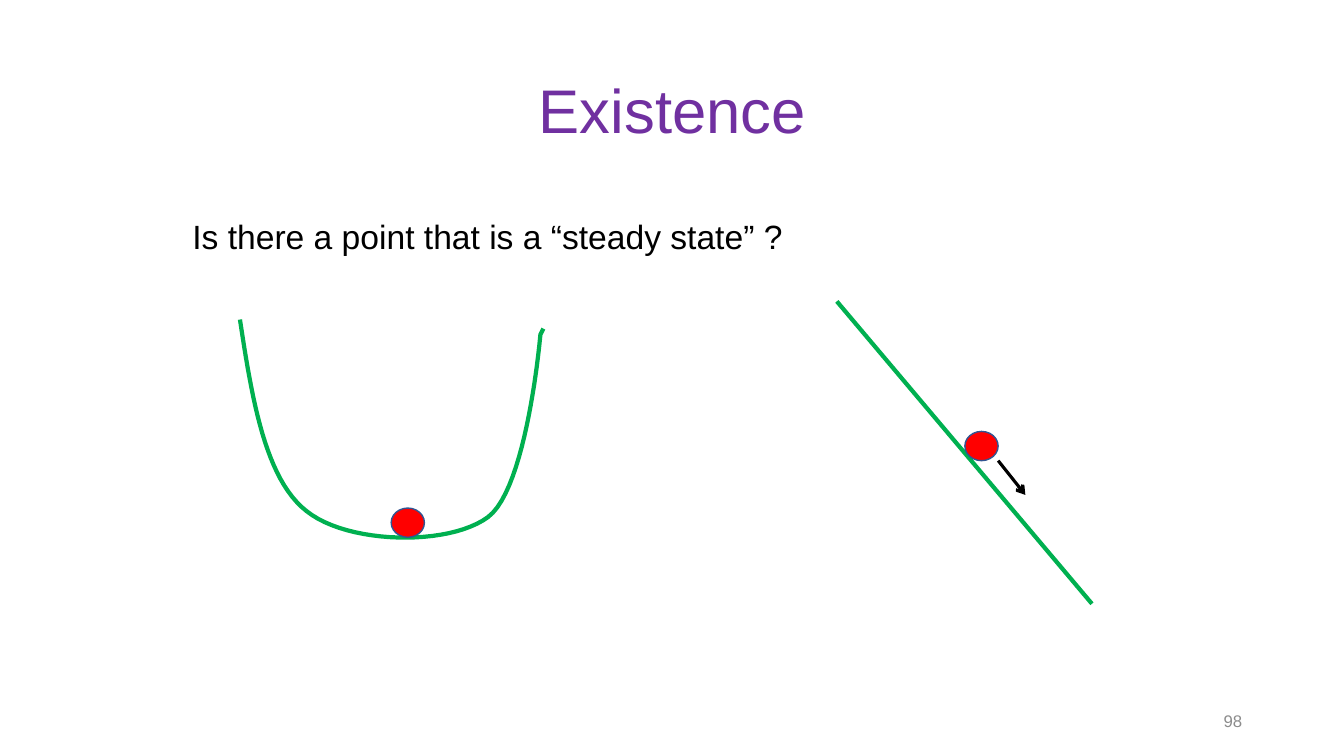
from lxml.etree import SubElement
from pptx import Presentation
from pptx.dml.color import RGBColor
from pptx.enum.shapes import MSO_CONNECTOR, MSO_SHAPE
from pptx.enum.text import MSO_ANCHOR, PP_ALIGN
from pptx.oxml.ns import qn
from pptx.util import Pt

PX = 9144
GREEN, RED, BLUE = "00B050", "FF0000", "325491"
CURVE_STEPS = 24
BALL_W, BALL_H = 33, 29


def px(length):
    """Turn px (100 to the inch) into EMU."""
    return round(length * PX)


def color(hex_code):
    """Turn a hex string into a colour."""
    return RGBColor.from_string(hex_code)


def set_line(line, hex_code, width):
    """Give a line its colour and width in points."""
    line.color.rgb = color(hex_code)
    line.width = Pt(width)


def add_text(slide, box, text, size, hex_code, align=PP_ALIGN.LEFT,
             anchor=MSO_ANCHOR.TOP, spacing=1.0):
    """Write one paragraph into the given box."""
    label = slide.shapes.add_textbox(*map(px, box))
    frame = label.text_frame
    frame.word_wrap = True
    frame.vertical_anchor = anchor
    paragraph = frame.paragraphs[0]
    paragraph.alignment = align
    paragraph.line_spacing = spacing
    run = paragraph.add_run()
    run.text = text
    run.font.name = "Arial"
    run.font.size = Pt(size)
    run.font.color.rgb = color(hex_code)


def add_stroke(slide, start, end, hex_code, width, arrow=False):
    """Draw a straight line, with an arrowhead at its end if asked."""
    stroke = slide.shapes.add_connector(
        MSO_CONNECTOR.STRAIGHT, *map(px, (*start, *end)))
    set_line(stroke.line, hex_code, width)
    if arrow:
        SubElement(stroke.line._get_or_add_ln(), qn("a:tailEnd"), type="arrow")
    SubElement(stroke._element.spPr, qn("a:effectLst"))


def add_ball(slide, left, top):
    """Draw the red ball."""
    ball = slide.shapes.add_shape(
        MSO_SHAPE.OVAL, *map(px, (left, top, BALL_W, BALL_H)))
    ball.shadow.inherit = False
    ball.fill.solid()
    ball.fill.fore_color.rgb = color(RED)
    set_line(ball.line, BLUE, 1)


def bezier(start, control_1, control_2, end):
    """List points along a cubic curve, leaving out its start."""
    points = []
    for step in range(1, CURVE_STEPS + 1):
        t = step / CURVE_STEPS
        weights = ((1 - t) ** 3, 3 * t * (1 - t) ** 2, 3 * t * t * (1 - t), t ** 3)
        points.append(tuple(
            sum(w * v for w, v in zip(weights, axis))
            for axis in zip(start, control_1, control_2, end)))
    return points


def draw_valley(slide, left, top):
    """Draw the valley with a ball at rest on its floor."""
    rim, left_bend, right_bend, right_rim = (0, 0), (66, 190), (246, 196), (298, 15)
    outline = [rim]
    outline += bezier(rim, (12, 79), (25, 158), left_bend)
    outline += bezier(left_bend, (107, 223), (207, 225), right_bend)
    outline += bezier(right_bend, (285, 167), right_rim, right_rim)
    outline.append((301, 9))
    points = [(px(left + x), px(top + y)) for x, y in outline]
    builder = slide.shapes.build_freeform(*points[0])
    builder.add_line_segments(points[1:], close=False)
    valley = builder.convert_to_shape()
    valley.shadow.inherit = False
    valley.fill.background()
    set_line(valley.line, GREEN, 3)
    add_ball(slide, left + 150, top + 187)


def draw_slope(slide, left, top, width, height):
    """Draw the slope with a ball rolling down it."""
    add_stroke(slide, (left, top), (left + width, top + height), GREEN, 3)
    ball_left, ball_top = left + 127, top + 129
    add_ball(slide, ball_left, ball_top)
    x, y = ball_left + BALL_W, ball_top + BALL_H
    add_stroke(slide, (x, y), (x + 27, y + 34), "000000", 2.25, arrow=True)


def main():
    """Build the slide and save it."""
    deck = Presentation()
    deck.slide_width, deck.slide_height = px(1333), px(750)
    slide = deck.slides.add_slide(deck.slide_layouts[6])
    add_text(slide, (92, 40, 1150, 145), "Existence", 44, "7030A0",
             align=PP_ALIGN.CENTER, anchor=MSO_ANCHOR.MIDDLE, spacing=0.9)
    add_text(slide, (942, 695, 300, 40), "98", 12, "8C8C8C",
             align=PP_ALIGN.RIGHT, anchor=MSO_ANCHOR.MIDDLE)
    add_text(slide, (181, 189, 942, 63),
             "Is there a point that is a “steady state” ?", 24, "000000", spacing=1.5)
    draw_valley(slide, 238, 317)
    draw_slope(slide, 830, 299, 253, 300)
    deck.save("out.pptx")


if __name__ == "__main__":
    main()
